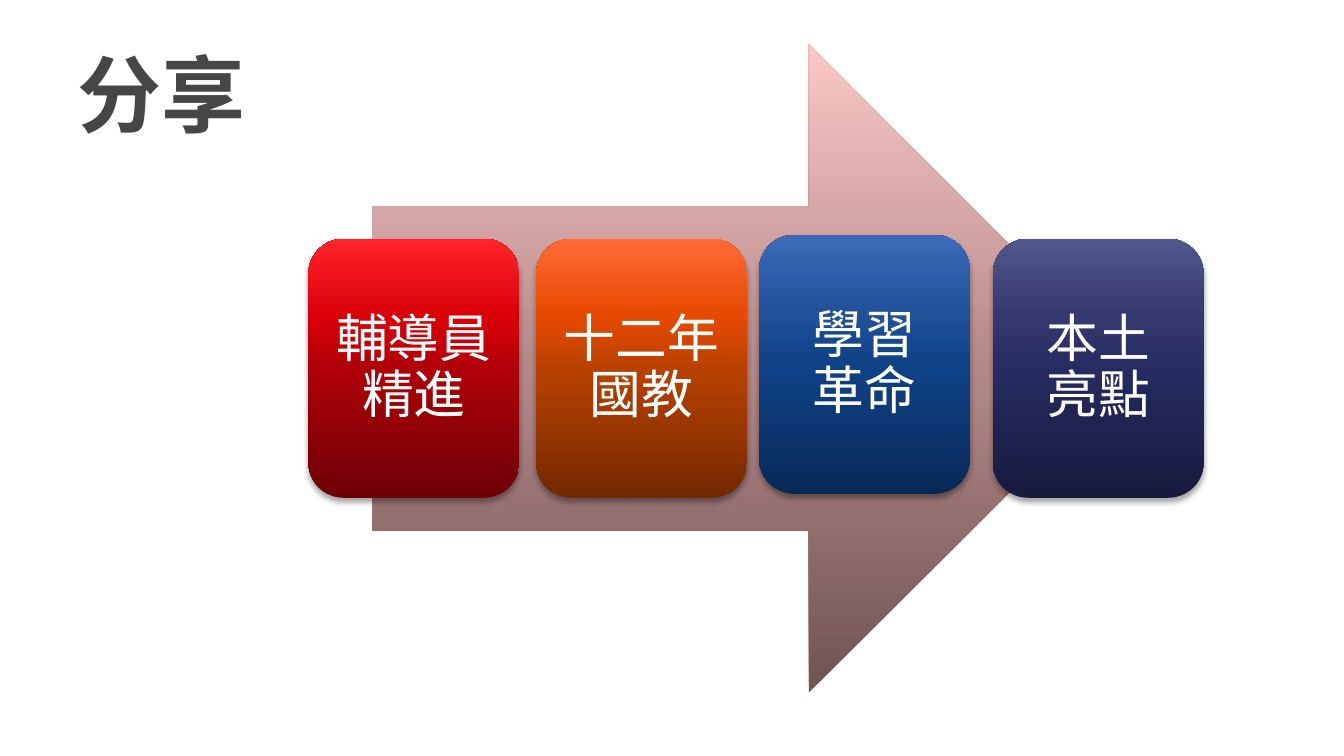
from lxml.etree import SubElement
from pptx import Presentation
from pptx.dml.color import RGBColor
from pptx.enum.shapes import MSO_SHAPE
from pptx.enum.text import MSO_ANCHOR, PP_ALIGN
from pptx.oxml.ns import qn
from pptx.util import Pt

FONT = "Noto Sans Mono"
COLORS = {"title": "464646", "card_text": "FFFFFF", "shadow": "000000"}
# Gradient colours from bottom to top
GRADIENTS = {
    "arrow": ["705354", "B38888", "D0A2A2", "FBC6C6"],
    "red": ["6D0005", "B00008", "DA0008", "FF2429"],
    "orange": ["732800", "B94100", "E64900", "FF6933"],
    "blue": ["072956", "104288", "205199", "3D6BB9"],
    "indigo": ["171A3D", "262B61", "353970", "51568D"],
}
STOPS = [0, 50, 70, 100]
CARD_WIDTH, CARD_HEIGHT = 150.5, 185
# Text, gradient, left, top
CARDS = [
    ("輔導員精進", "red", 220.3, 170.6),
    ("十二年國教", "orange", 383, 170.6),
    ("學習 革命", "blue", 542.2, 167.8),
    ("本土 亮點", "indigo", 709.2, 170.6),
]


def format_text(paragraph, size, color, bold=False):
    for run in paragraph.runs:
        run.font.name = FONT
        run.font.size = Pt(size)
        run.font.bold = bold
        run.font.color.rgb = RGBColor.from_string(COLORS[color])
        latin = run.font._element.find(qn("a:latin"))
        latin.addnext(latin.makeelement(qn("a:ea"), {"typeface": FONT}))


def add_gradient_shape(slide, preset, left, top, width, height, gradient):
    shape = slide.shapes.add_shape(preset, Pt(left), Pt(top), Pt(width), Pt(height))
    shape.shadow.inherit = False
    shape.line.fill.background()
    shape.fill.gradient()
    fill = shape._element.spPr.find(qn("a:gradFill"))
    for child in list(fill):
        fill.remove(child)
    stops = SubElement(fill, qn("a:gsLst"))
    for position, color in zip(STOPS, GRADIENTS[gradient]):
        stop = SubElement(stops, qn("a:gs"), pos=str(position * 1000))
        SubElement(stop, qn("a:srgbClr"), val=color)
    SubElement(fill, qn("a:lin"), ang=str(270 * 60000), scaled="0")
    return shape


def add_drop_shadow(shape):
    effects = shape._element.spPr.find(qn("a:effectLst"))
    shadow = SubElement(effects, qn("a:outerShdw"), blurRad=str(Pt(4)),
                        dist=str(Pt(3)), dir=str(90 * 60000), rotWithShape="0")
    color = SubElement(shadow, qn("a:srgbClr"), val=COLORS["shadow"])
    SubElement(color, qn("a:alpha"), val="35000")


def add_card(slide, text, gradient, left, top):
    card = add_gradient_shape(slide, MSO_SHAPE.ROUNDED_RECTANGLE, left, top,
                              CARD_WIDTH, CARD_HEIGHT, gradient)
    add_drop_shadow(card)
    frame = card.text_frame
    frame.text = text
    frame.word_wrap = True
    frame.vertical_anchor = MSO_ANCHOR.MIDDLE
    frame.margin_left = frame.margin_right = Pt(3.6)
    frame.margin_top = frame.margin_bottom = Pt(3.6)
    paragraph = frame.paragraphs[0]
    paragraph.alignment = PP_ALIGN.CENTER
    paragraph.line_spacing = 0.9
    format_text(paragraph, 37, "card_text")


def set_title(slide, text):
    title = slide.shapes.title
    title.left, title.top, title.width, title.height = Pt(48), Pt(21.6), Pt(864), Pt(90)
    title.text_frame.text = text
    title.text_frame.vertical_anchor = MSO_ANCHOR.MIDDLE
    paragraph = title.text_frame.paragraphs[0]
    paragraph.alignment = PP_ALIGN.LEFT
    format_text(paragraph, 60, "title", bold=True)


def main():
    presentation = Presentation()
    presentation.slide_width, presentation.slide_height = Pt(960), Pt(540)
    slide = presentation.slides.add_slide(presentation.slide_layouts.get_by_name("Title Only"))

    set_title(slide, "分享")
    # Arrow behind the cards
    add_gradient_shape(slide, MSO_SHAPE.RIGHT_ARROW, 265.7, 31.7, 543.6, 463, "arrow")
    # Topic cards
    for card in CARDS:
        add_card(slide, *card)

    presentation.save("out.pptx")


if __name__ == "__main__":
    main()
